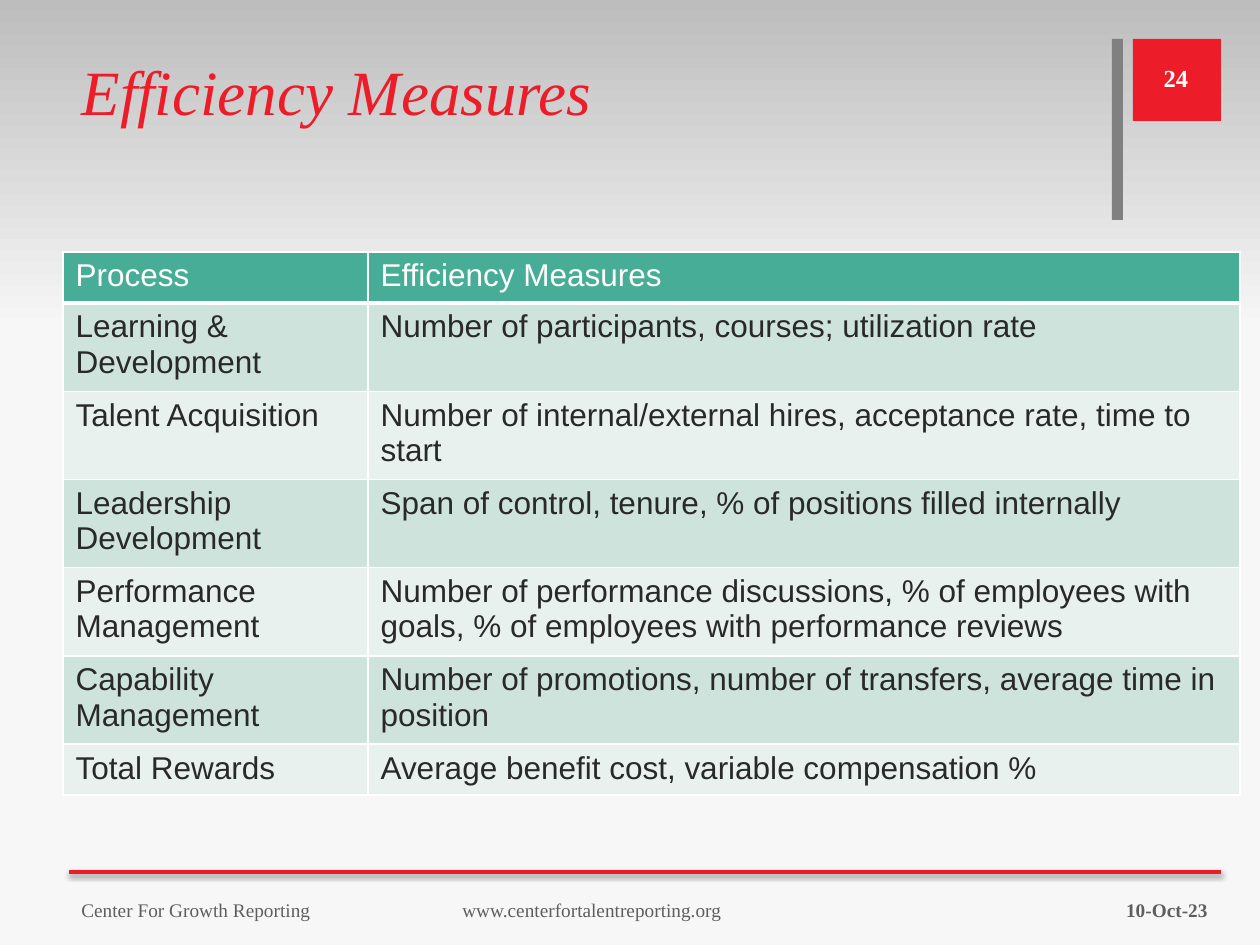
"""Build the Efficiency Measures slide."""
from lxml import etree
from pptx import Presentation
from pptx.dml.color import RGBColor
from pptx.enum.shapes import MSO_CONNECTOR, MSO_SHAPE
from pptx.enum.text import MSO_ANCHOR, PP_ALIGN
from pptx.oxml import parse_xml
from pptx.oxml.ns import nsdecls, qn
from pptx.util import Pt

RECT, LINE = MSO_SHAPE.RECTANGLE, MSO_CONNECTOR.STRAIGHT
TOP, MID = MSO_ANCHOR.TOP, MSO_ANCHOR.MIDDLE
LEFT, MID_X, RIGHT = PP_ALIGN.LEFT, PP_ALIGN.CENTER, PP_ALIGN.RIGHT
SCALE = 914400 / 126
SERIF, SANS = "Times New Roman", "Arial"
HUES = {
    "red": "ED1C29", "bar": "808080", "foot": "5E5E5E", "white": "FFFFFF",
    "ink": "292929", "head": "48AD97", "odd": "CFE3DD", "even": "E9F1EF",
    "black": "000000",
}
FADE = [(0, "BDBDBD"), (35, "F7F7F7"), (100, "F8F8F8")]
ROWS = [
    ("Process", "Efficiency Measures"),
    ("Learning & Development",
     "Number of participants, courses; utilization rate"),
    ("Talent Acquisition",
     "Number of internal/external hires, acceptance rate, time to start"),
    ("Leadership Development",
     "Span of control, tenure, % of positions filled internally"),
    ("Performance Management",
     "Number of performance discussions, % of employees with goals, "
     "% of employees with performance reviews"),
    ("Capability Management",
     "Number of promotions, number of transfers, average time in position"),
    ("Total Rewards", "Average benefit cost, variable compensation %"),
]
WIDTHS = (305, 872)
HEIGHTS = (51, 83, 83, 83, 83, 83, 51)


def px(*sizes):
    """Turn pixels into a list of EMU lengths."""
    return [round(size * SCALE) for size in sizes]


def hue(name):
    """Look up a colour by name."""
    return RGBColor.from_string(HUES[name])


def style(frame, size, color, face=SERIF, bold=False, slant=False, align=LEFT):
    """Format every run of a text frame."""
    for para in frame.paragraphs:
        para.alignment = align
        for run in para.runs:
            font = run.font
            font.name, font.size = face, Pt(size)
            font.bold, font.italic = bold, slant
            font.color.rgb = hue(color)


def add_block(slide, box, color):
    """Add a plain filled rectangle."""
    block = slide.shapes.add_shape(RECT, *px(*box))
    block.shadow.inherit = False
    block.line.fill.background()
    block.fill.solid()
    block.fill.fore_color.rgb = hue(color)
    return block


def add_fade(slide):
    """Put the grey gradient behind everything else."""
    block = add_block(slide, (0, 0, 1260, 945), "white")
    stops = "".join(
        f'<a:gs pos="{pos * 1000}"><a:srgbClr val="{tone}"/></a:gs>'
        for pos, tone in FADE)
    grad = parse_xml(
        f'<a:gradFill {nsdecls("a")} rotWithShape="1"><a:gsLst>{stops}</a:gsLst>'
        '<a:lin ang="5400000" scaled="0"/></a:gradFill>')
    props = block._element.spPr
    props.replace(props.find(qn("a:solidFill")), grad)
    slide.shapes._spTree.insert(2, block._element)


def add_rule(slide, left, right, y):
    """Add the red footer line with its soft shadow."""
    rule = slide.shapes.add_connector(LINE, *px(left, y, right, y))
    rule.line.color.rgb = hue("red")
    rule.line.width = Pt(2)
    rule._element.spPr.append(parse_xml(
        f'<a:effectLst {nsdecls("a")}><a:outerShdw blurRad="{Pt(3.1)}" '
        f'dist="{Pt(1.6)}" dir="5400000" rotWithShape="0">'
        f'<a:srgbClr val="{HUES["black"]}"><a:alpha val="38000"/></a:srgbClr>'
        '</a:outerShdw></a:effectLst>'))


def add_label(slide, box, text, size, color, bold=False, align=LEFT, tab=0):
    """Add a one-line text box, with a tab stop if asked."""
    frame = slide.shapes.add_textbox(*px(*box)).text_frame
    frame.word_wrap, frame.vertical_anchor = True, MID
    para = frame.paragraphs[0]
    para.text = text
    if tab:
        stops = etree.SubElement(para._p.get_or_add_pPr(), qn("a:tabLst"))
        etree.SubElement(stops, qn("a:tab"), pos=str(px(tab)[0]), algn="l")
    style(frame, size, color, bold=bold, align=align)


def set_title(slide, text):
    """Place and format the title."""
    title = slide.shapes.title
    title.left, title.top, title.width, title.height = px(69, 39, 1041, 181)
    frame = title.text_frame
    frame.text = text
    frame.vertical_anchor = TOP
    frame.margin_top = px(14)[0]
    style(frame, 36, "red", slant=True)


def set_edge(cell, side, width):
    """Draw one white cell border."""
    cell._tc.get_or_add_tcPr().append(parse_xml(
        f'<a:ln{side} {nsdecls("a")} w="{Pt(width)}"><a:solidFill>'
        f'<a:srgbClr val="{HUES["white"]}"/></a:solidFill></a:ln{side}>'))


def add_grid(slide, left, top):
    """Add the table of measures."""
    grid = slide.shapes.add_table(
        len(ROWS), len(WIDTHS),
        *px(left, top, sum(WIDTHS), sum(HEIGHTS))).table
    grid.first_row = grid.horz_banding = False
    for col, width in zip(grid.columns, px(*WIDTHS)):
        col.width = width
    for row, tall in zip(grid.rows, px(*HEIGHTS)):
        row.height = tall
    for i, texts in enumerate(ROWS):
        fill = "head" if i == 0 else "odd" if i % 2 else "even"
        for j, text in enumerate(texts):
            cell = grid.cell(i, j)
            for side in "LRTB":
                set_edge(cell, side, 3 if i == 0 and side == "B" else 1)
            cell.fill.solid()
            cell.fill.fore_color.rgb = hue(fill)
            cell.text_frame.text = text
            style(cell.text_frame, 18, "ink" if i else "white", SANS)


def main():
    """Build and save the slide."""
    deck = Presentation()
    deck.slide_width, deck.slide_height = px(1260, 945)
    slide = deck.slides.add_slide(deck.slide_layouts[5])
    add_fade(slide)
    add_block(slide, (1133, 39, 88, 82), "red")
    add_block(slide, (1112, 39, 11, 181), "bar")
    add_rule(slide, 69, 1221, 872)
    set_title(slide, "Efficiency Measures")
    add_label(slide, (926, 885, 294, 50), "10-Oct-23", 11, "foot",
              bold=True, align=RIGHT)
    add_label(slide, (69, 885, 834, 50),
              "Center For Growth Reporting\twww.centerfortalentreporting.org",
              11, "foot", tab=381)
    add_label(slide, (1134, 53, 84, 50), "24", 14, "white",
              bold=True, align=MID_X)
    add_grid(slide, 63, 252)
    deck.save("out.pptx")


if __name__ == "__main__":
    main()
